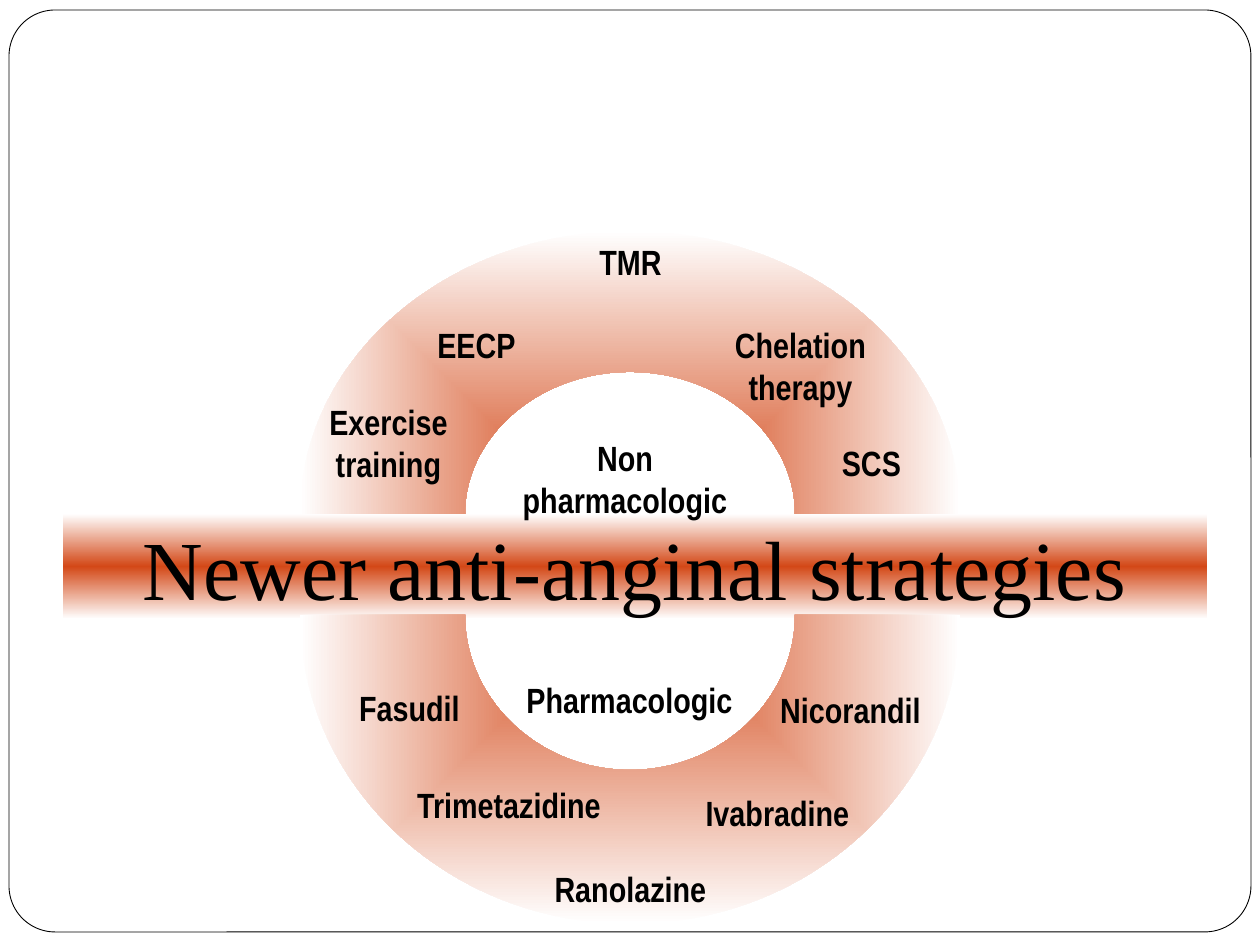
from pptx import Presentation
from pptx.dml.color import RGBColor
from pptx.enum.shapes import MSO_SHAPE
from pptx.enum.text import MSO_ANCHOR, PP_ALIGN
from pptx.oxml import parse_xml
from pptx.oxml.ns import nsdecls, qn
from pptx.util import Pt

PX = 914400 // 126
COLORS = {"white": "FFFFFF", "black": "000000", "orange": "D34817"}
LINEAR = '<a:lin ang="5400000" scaled="0"/>'
FROM_CENTER = '<a:path path="rect"><a:fillToRect l="50000" t="50000" r="50000" b="50000"/></a:path>'


def add_gradient(shape, names, direction):
    step = 100000 // (len(names) - 1)
    stops = "".join(
        f'<a:gs pos="{i * step}"><a:srgbClr val="{COLORS[name]}"/></a:gs>'
        for i, name in enumerate(names)
    )
    shape._element.spPr.insert(2, parse_xml(
        f'<a:gradFill {nsdecls("a")} rotWithShape="1"><a:gsLst>{stops}</a:gsLst>{direction}</a:gradFill>'
    ))
    shape.line.fill.background()
    shape.shadow.inherit = False


def add_label(shapes, text, left, top, width, height):
    box = shapes.add_textbox(left * PX, top * PX, width * PX, height * PX)
    box.text_frame.word_wrap = True
    box.text_frame.text = text
    for para in box.text_frame.paragraphs:
        para.alignment = PP_ALIGN.CENTER
        for span in para.runs:
            span.font.name = "Arial Narrow"
            span.font.size = Pt(20)
            span.font.bold = True
            span.font.color.rgb = RGBColor.from_string(COLORS["black"])


deck = Presentation()
deck.slide_width = 1260 * PX
deck.slide_height = 945 * PX
page = deck.slides.add_slide(deck.slide_layouts[6])

frame = page.shapes.add_shape(MSO_SHAPE.ROUNDED_RECTANGLE, 9 * PX, 10 * PX, 1242 * PX, 922 * PX)
frame.adjustments[0] = 0.05
frame.fill.solid()
frame.fill.fore_color.rgb = RGBColor.from_string(COLORS["white"])
frame.line.color.rgb = RGBColor.from_string(COLORS["black"])
frame.line.width = Pt(0.5)
frame.shadow.inherit = False

band = page.shapes.add_shape(MSO_SHAPE.RECTANGLE, 63 * PX, 514 * PX, 1144 * PX, 105 * PX)
add_gradient(band, ["white", "orange", "white"], LINEAR)
band.text_frame.word_wrap = False
band.text_frame.vertical_anchor = MSO_ANCHOR.MIDDLE
band.text_frame.text = "Newer anti-anginal strategies"
para = band.text_frame.paragraphs[0]
para.alignment = PP_ALIGN.CENTER
title = para.runs[0].font
title.name = "Times New Roman"
title.size = Pt(48)
title.color.rgb = RGBColor.from_string(COLORS["black"])

add_label(page.shapes, "Non pharmacologic", 483, 430, 284, 97)
add_label(page.shapes, "Pharmacologic", 456, 672, 347, 54)

center_x, radius_x, bend = 630, 330, 0.55
arc = [(-1, 0), (-1, bend), (-bend, 1), (0, 1), (bend, 1), (1, bend), (1, 0)]
halves = [
    (615, 309, 1, [
        ("Trimetazidine", 388, 777, 242, 54),
        ("Fasudil", 315, 680, 189, 54),
        ("Nicorandil", 756, 682, 189, 54),
        ("Ivabradine", 683, 785, 189, 54),
        ("Ranolazine", 536, 861, 189, 54),
    ]),
    (514, 283, -1, [
        ("Exercise training", 294, 394, 189, 88),
        ("EECP", 382, 317, 189, 50),
        ("Chelation\ntherapy", 706, 317, 189, 88),
        ("SCS", 777, 435, 189, 50),
        ("TMR", 536, 234, 189, 50),
    ]),
]
for edge_y, radius_y, side, labels in halves:
    group = page.shapes.add_group_shape()
    inner = [(center_x + radius_x / 2 * x, edge_y + side * radius_y / 2 * y) for x, y in arc]
    outer = [(center_x + radius_x * x, edge_y + side * radius_y * y) for x, y in reversed(arc)]
    builder = group.shapes.build_freeform(*inner[0], scale=PX)
    builder.add_line_segments(inner[1:] + outer)
    far_point = (center_x, edge_y - side * radius_y)
    builder.move_to(*far_point)
    builder.add_line_segments([far_point], close=False)
    ring = builder.convert_to_shape()
    segments = list(ring._element.iter(qn("a:lnTo")))
    for start in (0, 3, 7, 10):
        curve = parse_xml(f'<a:cubicBezTo {nsdecls("a")}/>')
        segments[start].addprevious(curve)
        for segment in segments[start:start + 3]:
            curve.append(segment[0])
            segment.getparent().remove(segment)
    add_gradient(ring, ["orange", "white"], FROM_CENTER)
    for label in labels:
        add_label(group.shapes, *label)

deck.save("out.pptx")
